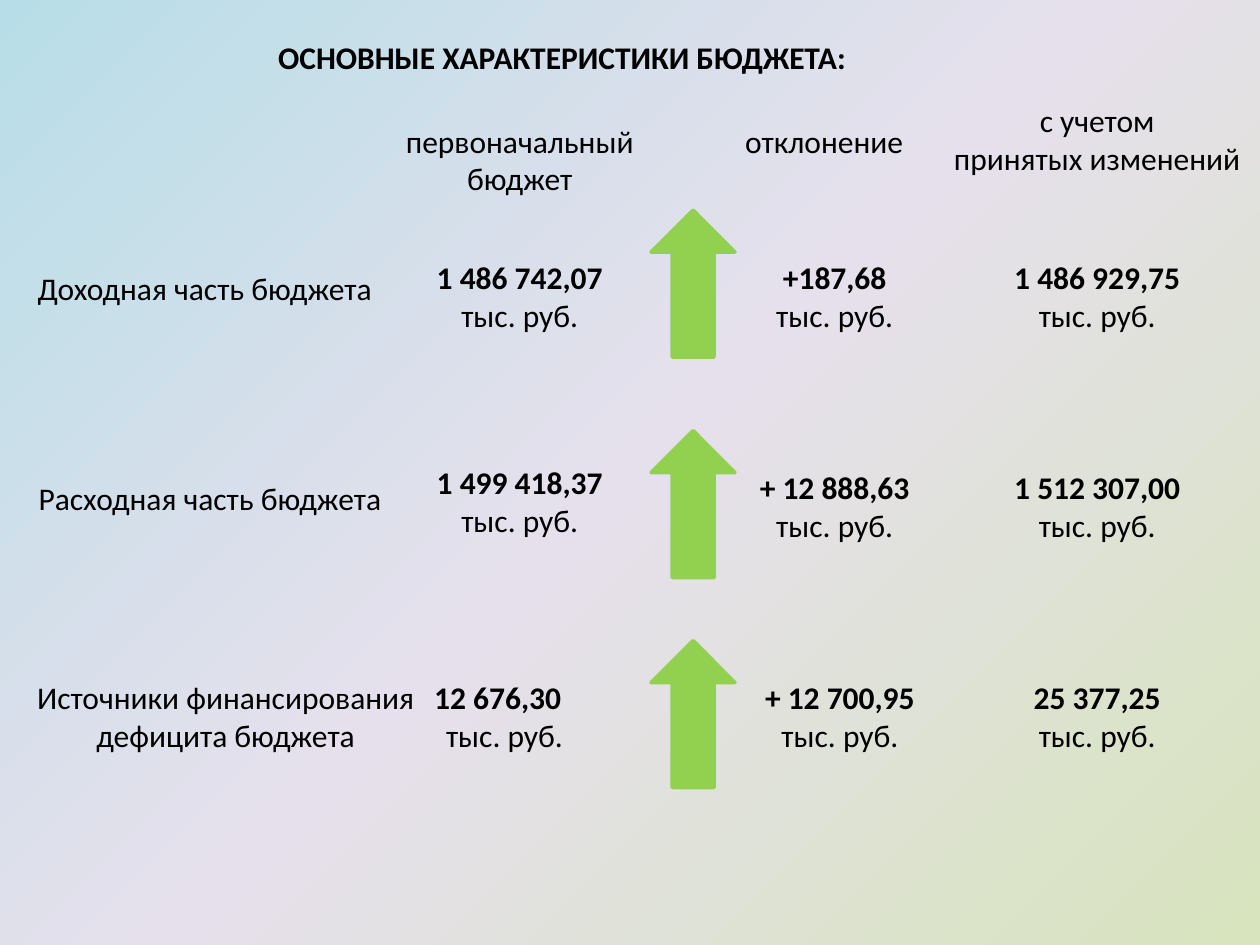
from dataclasses import dataclass

from lxml.etree import SubElement
from pptx import Presentation
from pptx.dml.color import RGBColor
from pptx.enum.shapes import MSO_SHAPE as Shape
from pptx.enum.text import MSO_ANCHOR as Anchor, MSO_AUTO_SIZE as AutoSize, PP_ALIGN as Align
from pptx.oxml.ns import qn
from pptx.util import Emu, Pt

EMU_PER_PX = 7620
ONE_LINE, TWO_LINES = 48, 85
UNIT = "тыс. руб."


@dataclass(frozen=True)
class Theme:
    font: str = "Calibri"
    size: int = 18
    text: str = "000000"
    arrow: str = "92D050"
    arrow_line: int = 2
    background: tuple = ((0, "D7E4BD"), (50, "E6E0EC"), (100, "B7DEE8"))


THEME = Theme()

HEADERS = [
    ((330, 110, 330, TWO_LINES), ["первоначальный бюджет"]),
    ((690, 110, 190, ONE_LINE), ["отклонение"]),
    ((890, 90, 310, TWO_LINES), ["с учетом", "принятых изменений"]),
]
LABELS = [
    ((20, 250, 350, ONE_LINE), "Доходная часть бюджета"),
    ((20, 450, 360, ONE_LINE), "Расходная часть бюджета"),
    ((20, 640, 390, TWO_LINES), "Источники финансирования дефицита бюджета"),
]
AMOUNTS = [
    ((400, 240, 190), "1 486 742,07"),
    ((710, 240, 170), "+187,68"),
    ((930, 240, 230), "1 486 929,75"),
    ((400, 435, 190), "1 499 418,37"),
    ((710, 440, 170), "+ 12 888,63"),
    ((950, 440, 190), "1 512 307,00"),
    ((400, 640, 190), "12 676,30"),
    ((710, 640, 180), "+ 12 700,95"),
    ((950, 640, 190), "25 377,25"),
]
SHIFTED_AMOUNT = "12 676,30"
ARROW_TOPS = [200, 410, 610]


def px(length):
    return Emu(length * EMU_PER_PX)


def place(shape, area):
    shape.left, shape.top, shape.width, shape.height = map(px, area)


def write(box, lines, bold_first=False, wrap=True):
    frame = box.text_frame
    frame.text = "\n".join(lines)
    frame.word_wrap = wrap
    frame.auto_size = AutoSize.SHAPE_TO_FIT_TEXT
    frame.vertical_anchor = Anchor.TOP
    for index, para in enumerate(frame.paragraphs):
        para.alignment = Align.CENTER
        font = para.font
        font.name, font.size = THEME.font, Pt(THEME.size)
        font.bold = bold_first and index == 0
        font.color.rgb = RGBColor.from_string(THEME.text)


def add_title(page, area, text):
    title = page.shapes.title
    place(title, area)
    write(title, [text], bold_first=True, wrap=False)


def add_text(page, area, lines, bold_first=False):
    box = page.shapes.add_textbox(*map(px, area))
    write(box, lines, bold_first)
    return box


def add_amount(page, area, amount):
    box = add_text(page, (*area, TWO_LINES), [amount, UNIT], bold_first=True)
    if amount == SHIFTED_AMOUNT:
        number, unit = (para._p.get_or_add_pPr() for para in box.text_frame.paragraphs)
        number.set("marR", str(px(42)))
        unit.set("marL", str(px(13)))


def add_arrow(page, top):
    arrow = page.shapes.add_shape(Shape.DOWN_ARROW, px(620), px(top), px(80), px(140))
    colour = RGBColor.from_string(THEME.arrow)
    arrow.rotation = 180
    arrow.shadow.inherit = False
    arrow.fill.solid()
    arrow.fill.fore_color.rgb = colour
    arrow.line.color.rgb = colour
    arrow.line.width = Pt(THEME.arrow_line)


def paint_background(page):
    page.background.fill.gradient()
    gradient = page.element.find(".//" + qn("a:gradFill"))
    for child in list(gradient):
        gradient.remove(child)
    stops = SubElement(gradient, qn("a:gsLst"))
    for position, colour in THEME.background:
        stop = SubElement(stops, qn("a:gs"), pos=str(position * 1000))
        SubElement(stop, qn("a:srgbClr"), val=colour)
    circle = SubElement(gradient, qn("a:path"), path="circle")
    SubElement(circle, qn("a:fillToRect"), l="100000", t="100000")


def main():
    deck = Presentation()
    deck.slide_width, deck.slide_height = px(1200), px(900)
    page = deck.slides.add_slide(deck.slide_layouts[5])
    paint_background(page)
    add_title(page, (250, 30, 571, ONE_LINE), "ОСНОВНЫЕ ХАРАКТЕРИСТИКИ БЮДЖЕТА:")
    for area, lines in HEADERS:
        add_text(page, area, lines)
    for area, label in LABELS:
        add_text(page, area, [label])
    for area, amount in AMOUNTS:
        add_amount(page, area, amount)
    for top in ARROW_TOPS:
        add_arrow(page, top)
    deck.save("out.pptx")


if __name__ == "__main__":
    main()
